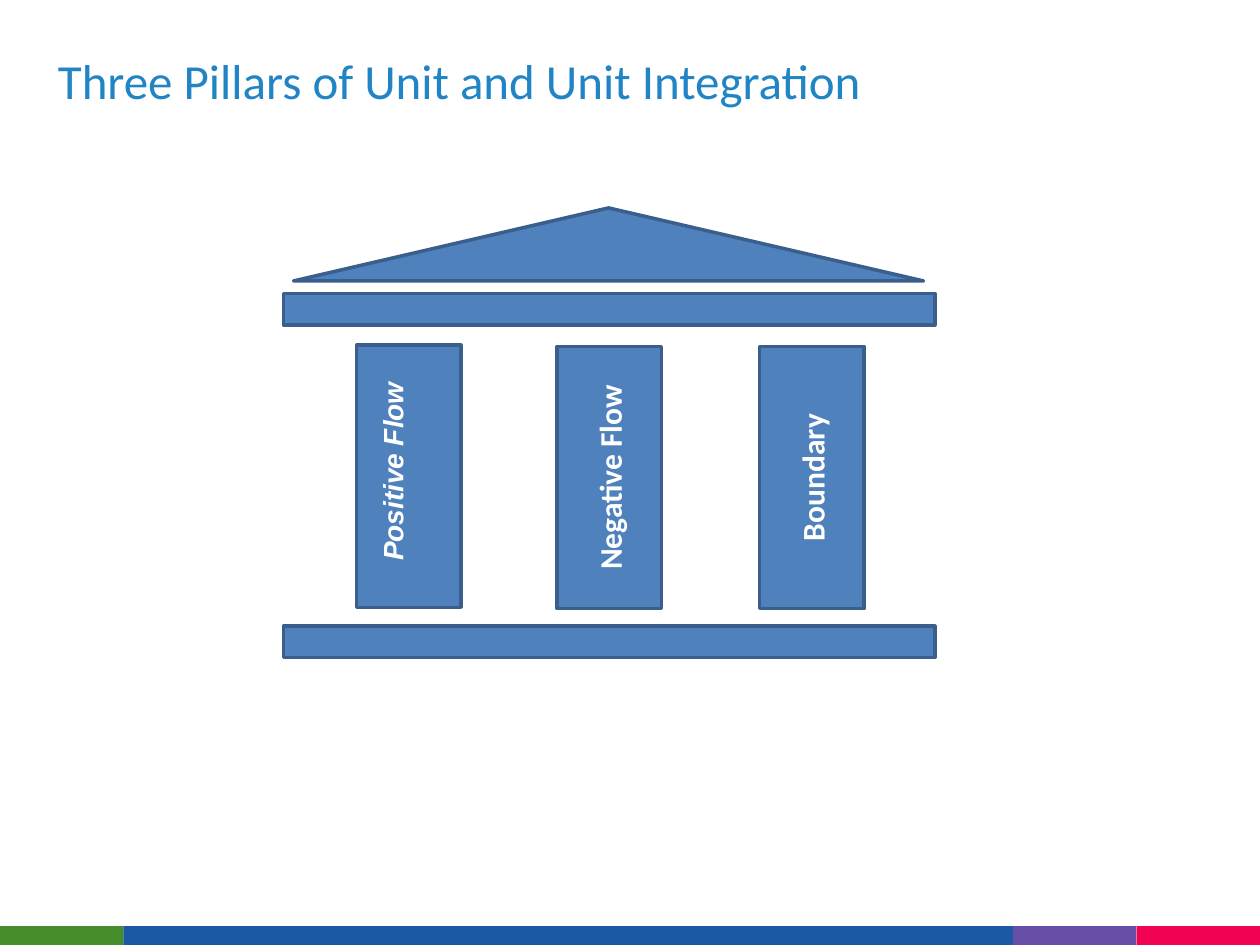
from pptx import Presentation
from pptx.dml.color import RGBColor
from pptx.enum.shapes import MSO_SHAPE
from pptx.enum.text import MSO_ANCHOR, MSO_AUTO_SIZE, PP_ALIGN
from pptx.util import Inches, Pt

TITLE = "Three Pillars of Unit and Unit Integration"
FOOTER_BANDS = [("468D2B", 0.98), ("1C59A5", 7.06), ("674EA7", 0.98), ("F20253", 0.98)]
PILLARS = [(2.83, 2.74, ""), (4.42, 2.75, "Negative Flow"), (6.03, 2.75, "Boundary")]
BEAM_TOPS = [2.33, 4.97]
ROOF = (2.33, 1.65, 5, 0.58)
LABEL = ("Positive Flow", (2.93, 2.88, 0.47, 1.67))

TITLE_FONT = {"name": "Calibri", "size": Pt(28), "bold": False}
PILLAR_FONT = {"name": "Calibri", "size": Pt(18), "bold": True}
LABEL_FONT = {"name": "Arial", "size": Pt(16), "bold": True, "italic": True}


def color(hex_value):
    return RGBColor.from_string(hex_value)


def write_text(frame, text, font_format, font_color, alignment, anchor):
    frame.vertical_anchor = anchor
    paragraph = frame.paragraphs[0]
    paragraph.alignment = alignment
    run = paragraph.add_run()
    run.text = text
    for name, value in font_format.items():
        setattr(run.font, name, value)
    run.font.color.rgb = color(font_color)


def rotate_text(frame):
    frame._txBody.bodyPr.set("vert", "vert270")


def add_block(slide, kind, box, fill, line=None):
    shape = slide.shapes.add_shape(kind, *map(Inches, box))
    shape.shadow.inherit = False
    shape.fill.solid()
    shape.fill.fore_color.rgb = color(fill)
    if line:
        shape.line.color.rgb = color(line)
        shape.line.width = Pt(2)
    else:
        shape.line.fill.background()
    return shape


def add_temple_part(slide, kind, box):
    return add_block(slide, kind, box, "4F81BD", "3A5F8C")


def add_footer(slide):
    left = 0
    for fill, width in FOOTER_BANDS:
        add_block(slide, MSO_SHAPE.RECTANGLE, (left, 7.35, width, 0.16), fill)
        left += width


def add_title(slide):
    title = slide.shapes.title
    title.left, title.top, title.width, title.height = map(Inches, (0.36, 0.3, 9.25, 1.01))
    frame = title.text_frame
    frame.word_wrap = True
    frame.auto_size = MSO_AUTO_SIZE.NONE
    for side in ("left", "top", "right", "bottom"):
        setattr(frame, f"margin_{side}", Inches(0.1))
    write_text(frame, TITLE, TITLE_FONT, "2185C5", PP_ALIGN.LEFT, MSO_ANCHOR.TOP)


def add_temple(slide):
    for left, top, text in PILLARS:
        pillar = add_temple_part(slide, MSO_SHAPE.RECTANGLE, (left, top, 0.83, 2.08))
        if text:
            rotate_text(pillar.text_frame)
            write_text(pillar.text_frame, text, PILLAR_FONT, "FFFFFF",
                       PP_ALIGN.CENTER, MSO_ANCHOR.MIDDLE)
    for top in BEAM_TOPS:
        add_temple_part(slide, MSO_SHAPE.RECTANGLE, (2.25, top, 5.17, 0.25))
    add_temple_part(slide, MSO_SHAPE.ISOSCELES_TRIANGLE, ROOF)

    text, box = LABEL
    frame = slide.shapes.add_textbox(*map(Inches, box)).text_frame
    frame.word_wrap = True
    frame.auto_size = MSO_AUTO_SIZE.SHAPE_TO_FIT_TEXT
    rotate_text(frame)
    write_text(frame, text, LABEL_FONT, "FFFFFF", PP_ALIGN.LEFT, MSO_ANCHOR.TOP)


def main():
    presentation = Presentation()
    presentation.slide_width = Inches(10)
    presentation.slide_height = Inches(7.5)
    slide = presentation.slides.add_slide(presentation.slide_layouts[5])
    add_footer(slide)
    add_title(slide)
    add_temple(slide)
    presentation.save("out.pptx")


if __name__ == "__main__":
    main()
